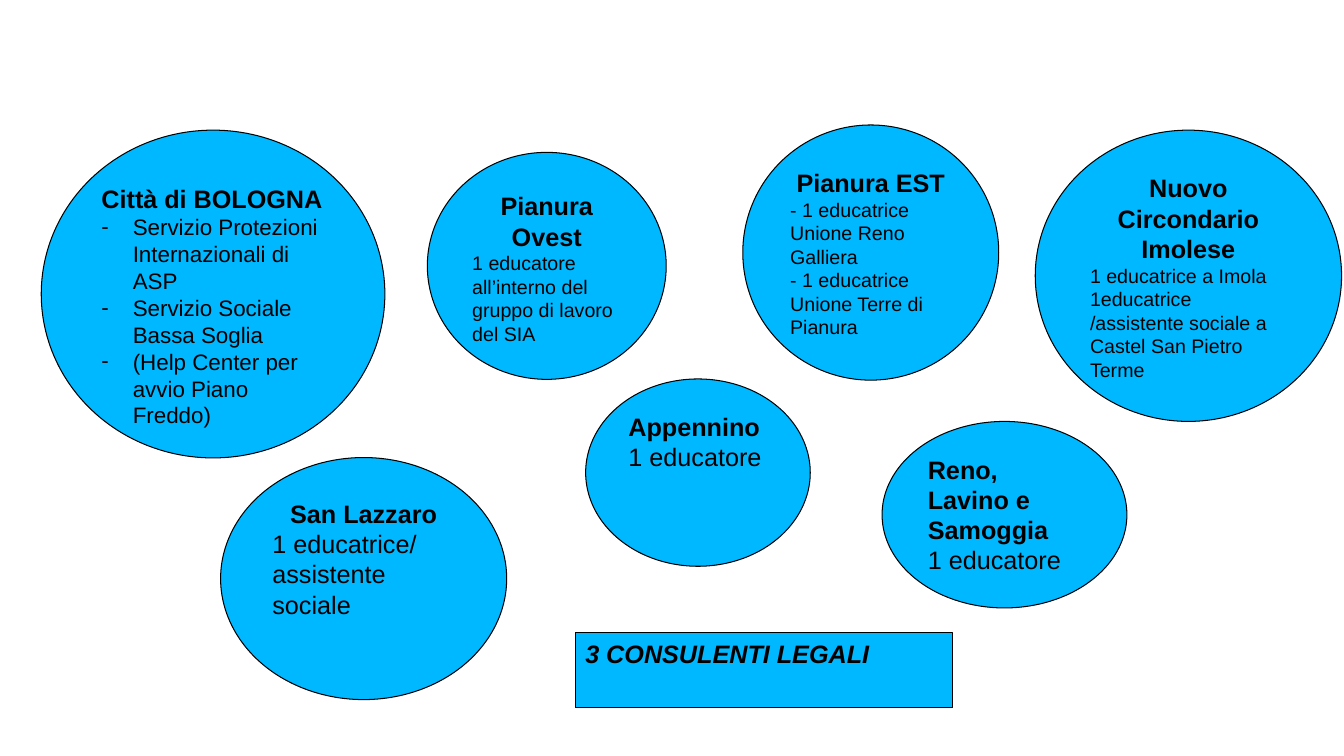
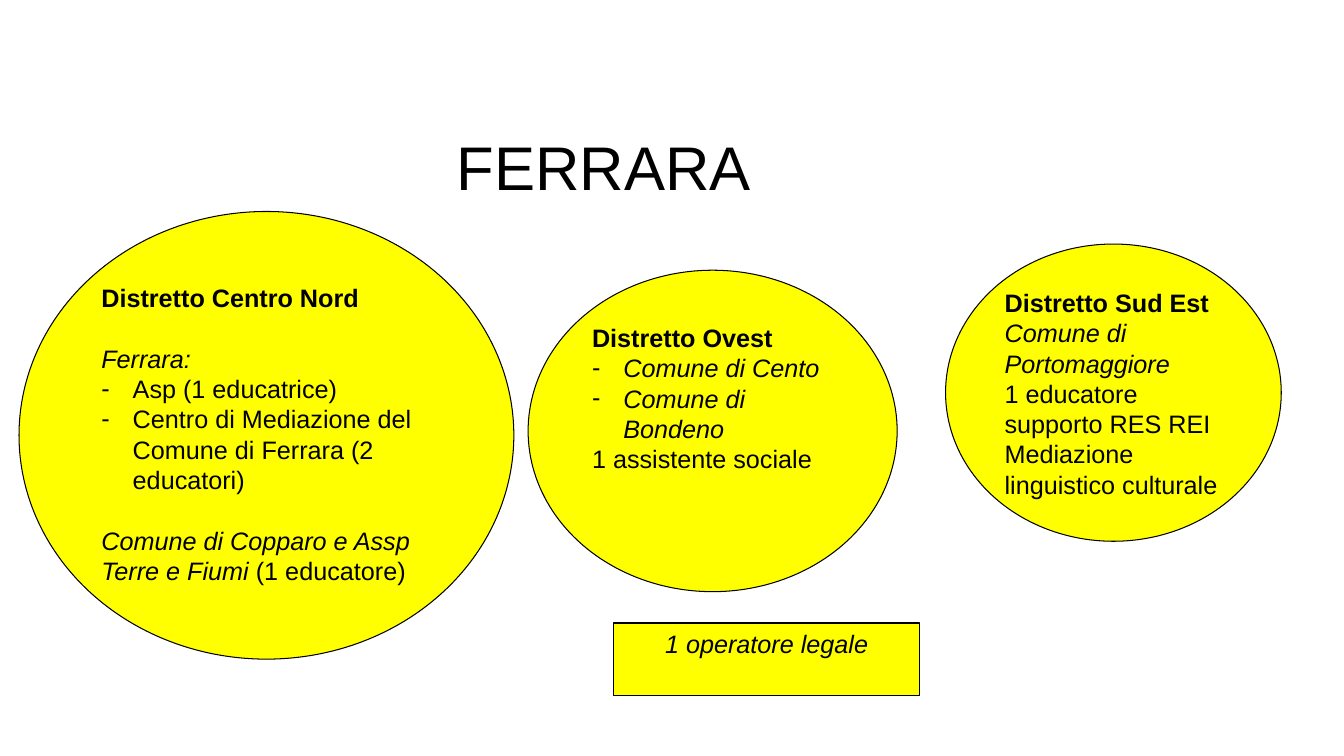
from dataclasses import dataclass

from lxml.etree import SubElement
from pptx import Presentation
from pptx.dml.color import RGBColor
from pptx.enum.shapes import MSO_SHAPE
from pptx.enum.text import MSO_ANCHOR, PP_ALIGN
from pptx.oxml.ns import qn
from pptx.util import Cm, Pt

BLUE = RGBColor(0x00, 0xB8, 0xFF)
YELLOW = RGBColor(0xFF, 0xFF, 0x00)
BLACK = RGBColor(0x00, 0x00, 0x00)
FONT = "Arial"
BULLET_INDENT = Cm(0.79)
TOP_INSET = 0.13
CROWDED_TOP_INSET = 0


@dataclass
class Line:
    """One paragraph; tail is an upright ending, gap is the space before in points."""
    text: str
    size: int = 18
    bold: bool = False
    italic: bool = False
    bullet: bool = False
    centered: bool = False
    gap: int = 0
    tail: str = ""


def heading(text, centered=False):
    return Line(text, bold=True, centered=centered)


# Each shape: left, top, width, height in cm, its paragraphs, and a top inset if special
BOLOGNA_CIRCLES = [
    ((1.04, 3.28, 8.66, 8.26), [
        heading("Città di BOLOGNA"),
        Line("Servizio Protezioni Internazionali di ASP", 16, bullet=True),
        Line("Servizio Sociale Bassa Soglia", 16, bullet=True),
        Line("(Help Center per avvio Piano Freddo)", 16, bullet=True),
    ]),
    ((10.77, 3.84, 6.02, 5.72), [
        heading("Pianura Ovest", centered=True),
        Line("1 educatore all’interno del gruppo di lavoro del SIA", 14),
    ]),
    ((18.72, 3.15, 6.45, 6.43), [
        heading("Pianura EST", centered=True),
        Line("- 1 educatrice Unione Reno Galliera", 14),
        Line("- 1 educatrice Unione Terre di Pianura", 14),
    ]),
    ((14.76, 9.55, 5.66, 4.72), [
        heading("Appennino"),
        Line("1 educatore"),
    ]),
    ((22.23, 10.62, 6.17, 4.7), [
        heading("Reno, Lavino e Samoggia"),
        Line("1 educatore"),
    ]),
    ((26.09, 3.28, 7.72, 7.34), [
        heading("Nuovo Circondario Imolese", centered=True),
        Line("1 educatrice a Imola", 14),
        Line("1educatrice", 14),
        Line("/assistente sociale a Castel San Pietro Terme", 14),
    ], CROWDED_TOP_INSET),
    ((5.56, 11.53, 7.21, 6.1), [
        heading("San Lazzaro", centered=True),
        Line("1 educatrice/"),
        Line("assistente sociale"),
    ]),
]
BOLOGNA_LEGAL = ((14.5, 15.95, 9.5, 1.88),
                 [Line("3 CONSULENTI LEGALI", bold=True, italic=True)])

FERRARA_TITLE = ((0, 3, 30.45, 2.36), [Line("FERRARA", 44, centered=True)])
FERRARA_CIRCLES = [
    ((0.48, 5.33, 12.47, 11.28), [
        heading("Distretto Centro Nord"),
        Line("Ferrara:", italic=True, gap=22),
        Line("Asp (1 educatrice)", bullet=True),
        Line("Centro di Mediazione del Comune di Ferrara (2 educatori)", bullet=True),
        Line("Comune di Copparo e Assp Terre e Fiumi ", italic=True, gap=22,
             tail="(1 educatore)"),
    ]),
    ((13.31, 6.81, 9.3, 8.1), [
        heading("Distretto Ovest"),
        Line("Comune di Cento", italic=True, bullet=True),
        Line("Comune di Bondeno", italic=True, bullet=True),
        Line("1 assistente sociale"),
    ]),
    ((23.83, 6.15, 8.46, 7.49), [
        heading("Distretto Sud Est"),
        Line("Comune di Portomaggiore", italic=True),
        Line("1 educatore supporto RES REI"),
        Line("Mediazione linguistico culturale"),
    ], CROWDED_TOP_INSET),
]
FERRARA_LEGAL = ((15.47, 15.7, 7.7, 1.83),
                 [Line("1 operatore legale", italic=True, centered=True)])


def add_bullet(paragraph):
    properties = paragraph._p.get_or_add_pPr()
    properties.set("marL", str(BULLET_INDENT))
    properties.set("indent", str(-BULLET_INDENT))
    SubElement(properties, qn("a:buFont"), typeface=FONT)
    SubElement(properties, qn("a:buChar"), char="-")


def write_lines(frame, lines, anchor=MSO_ANCHOR.TOP):
    frame.word_wrap = True
    frame.vertical_anchor = anchor
    for index, line in enumerate(lines):
        paragraph = frame.add_paragraph() if index else frame.paragraphs[0]
        if line.bullet:
            add_bullet(paragraph)
        paragraph.alignment = PP_ALIGN.CENTER if line.centered else PP_ALIGN.LEFT
        if line.gap:
            paragraph.space_before = Pt(line.gap)
        font = paragraph.font
        font.name, font.size = FONT, Pt(line.size)
        font.bold, font.italic = line.bold, line.italic
        font.color.rgb = BLACK
        paragraph.add_run().text = line.text
        if line.tail:
            span = paragraph.add_run()
            span.text = line.tail
            span.font.italic = False


def add_title(page, place, lines):
    frame = page.shapes.add_textbox(*map(Cm, place)).text_frame
    frame.margin_left = frame.margin_right = frame.margin_top = frame.margin_bottom = 0
    write_lines(frame, lines, MSO_ANCHOR.MIDDLE)


def add_panel(page, kind, color, place, lines, top_inset=TOP_INSET):
    panel = page.shapes.add_shape(kind, *map(Cm, place))
    panel.shadow.inherit = False
    panel.fill.solid()
    panel.fill.fore_color.rgb = color
    panel.line.color.rgb = BLACK
    panel.line.width = Pt(0.75)
    panel.text_frame.margin_top = Cm(top_inset)
    write_lines(panel.text_frame, lines)


def add_page(deck, color, circles, legal, title=None):
    page = deck.slides.add_slide(deck.slide_layouts[6])
    if title:
        add_title(page, *title)
    for circle in circles:
        add_panel(page, MSO_SHAPE.OVAL, color, *circle)
    add_panel(page, MSO_SHAPE.RECTANGLE, color, *legal)


def main():
    deck = Presentation()
    deck.slide_width, deck.slide_height = Cm(33.87), Cm(19.05)
    add_page(deck, BLUE, BOLOGNA_CIRCLES, BOLOGNA_LEGAL)
    add_page(deck, YELLOW, FERRARA_CIRCLES, FERRARA_LEGAL, FERRARA_TITLE)
    deck.save("out.pptx")


if __name__ == "__main__":
    main()
